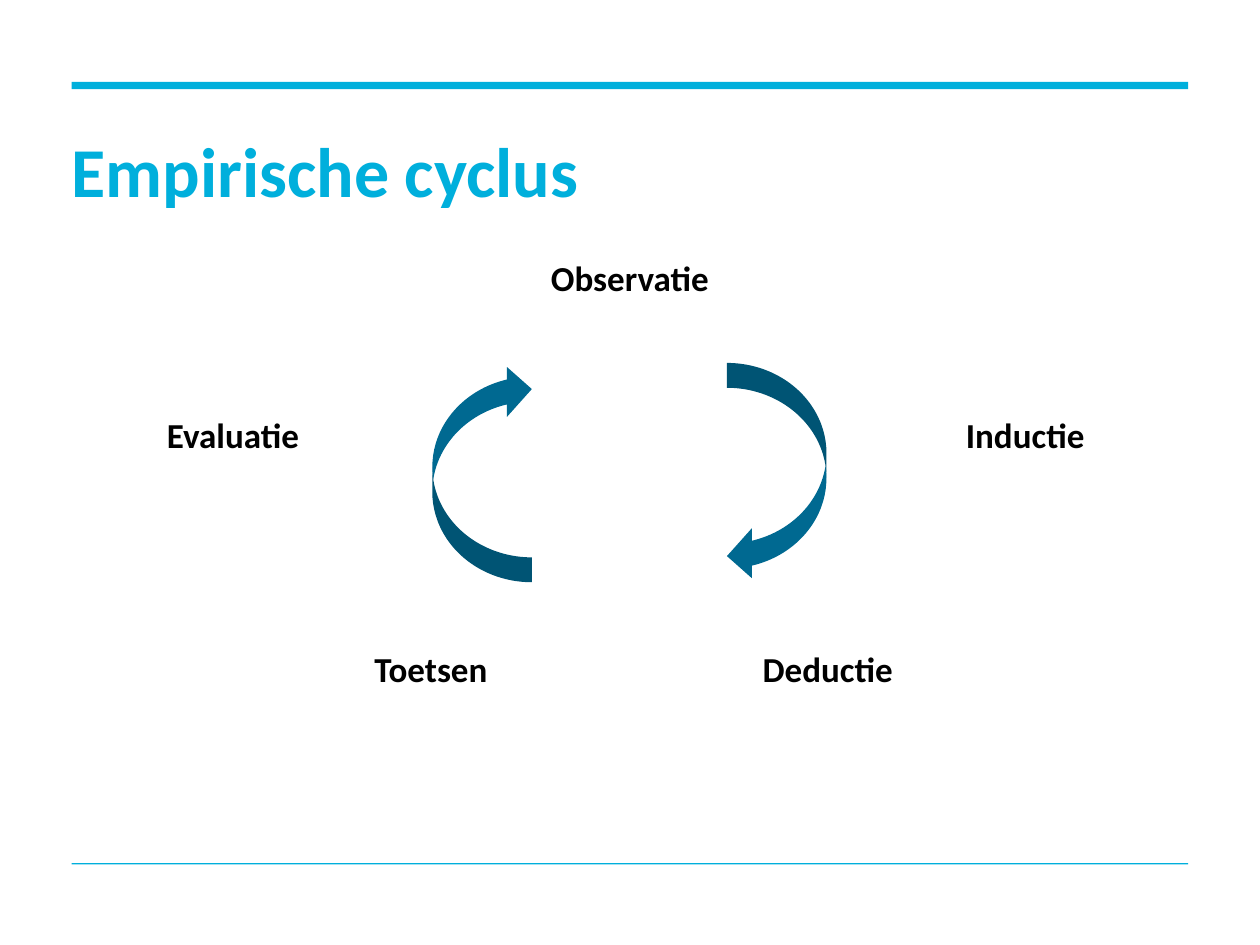
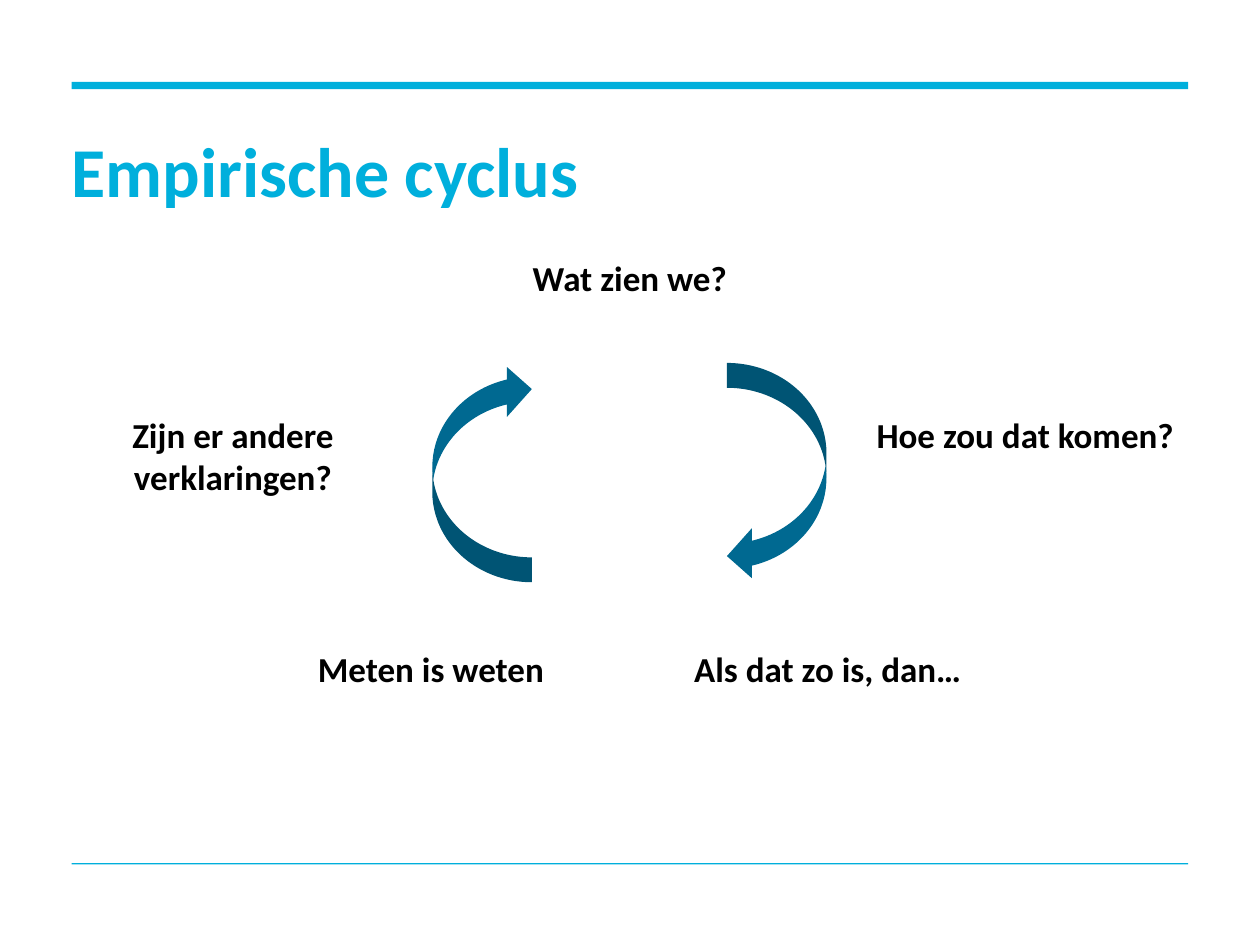
"""Build two slides on the empirical cycle."""
import pptx
import pptx.util
import pptx.dml.color
import pptx.enum.shapes
import pptx.enum.text

Pt = pptx.util.Pt
RGBColor = pptx.dml.color.RGBColor
Shape = pptx.enum.shapes.MSO_SHAPE
Align = pptx.enum.text.PP_ALIGN
Anchor = pptx.enum.text.MSO_ANCHOR
Fit = pptx.enum.text.MSO_AUTO_SIZE

CYAN = RGBColor(0x00, 0xAF, 0xDC)
BLUE = RGBColor(0x00, 0x69, 0x91)
BLACK = RGBColor(0x00, 0x00, 0x00)
FONT = "Calibri"
LEFT, WIDTH = 41, 638
RULES = [(46.8, 4.2), (493.2, 0.8)]
LABEL = (198.7, 31.5)
PLACES = [(260.6, 143.3), (486.5, 232.6), (373.7, 366.5), (146.9, 366.5), (33.8, 232.6)]
ARROWS = [(415.4, 207.4, 0), (247, 208.1, 180)]
TITLE = "Empirische cyclus"
STEPS = [
    ["Observatie", "Inductie", "Deductie", "Toetsen", "Evaluatie"],
    ["Wat zien we?", "Hoe zou dat komen?", "Als dat zo is, dan…",
     "Meten is weten", "Zijn er andere verklaringen?"],
]


def style(par, text, size, color, align):
    """Set the text of a paragraph and format its run."""
    par.text = text
    par.alignment = align
    font = par.runs[0].font
    font.name, font.size, font.bold = FONT, Pt(size), True
    font.color.rgb = color


def add_solid(slide, kind, box, color):
    """Add a filled shape without outline or shadow."""
    shape = slide.shapes.add_shape(kind, *map(Pt, box))
    shape.shadow.inherit = False
    shape.fill.solid()
    shape.fill.fore_color.rgb = color
    shape.line.fill.background()
    return shape


def add_title(slide):
    """Place and format the slide title."""
    title = slide.shapes.title
    title.left, title.top = Pt(LEFT), Pt(79.2)
    title.width, title.height = Pt(WIDTH), Pt(41.8)
    frame = title.text_frame
    frame.margin_left = frame.margin_right = 0
    frame.margin_top = frame.margin_bottom = 0
    frame.vertical_anchor = Anchor.MIDDLE
    frame.auto_size = Fit.NONE
    par = frame.paragraphs[0]
    style(par, TITLE, 40, CYAN, Align.LEFT)
    par.line_spacing = Pt(42)


def add_label(slide, text, place):
    """Add the centred label of one step."""
    box = slide.shapes.add_textbox(*map(Pt, place + LABEL))
    frame = box.text_frame
    frame.word_wrap = True
    frame.auto_size = Fit.SHAPE_TO_FIT_TEXT
    style(frame.paragraphs[0], text, 20, BLACK, Align.CENTER)


def add_cycle(deck, steps):
    """Add a slide with the labelled cycle."""
    slide = deck.slides.add_slide(deck.slide_layouts[5])
    for top, height in RULES:
        add_solid(slide, Shape.RECTANGLE, (LEFT, top, WIDTH, height), CYAN)
    add_title(slide)
    for text, place in zip(steps, PLACES):
        add_label(slide, text, place)
    for left, top, turn in ARROWS:
        arrow = add_solid(slide, Shape.CURVED_LEFT_ARROW, (left, top, 56.9, 124.6), BLUE)
        arrow.rotation = turn


def main():
    """Build and save the deck."""
    deck = pptx.Presentation()
    deck.slide_width, deck.slide_height = Pt(720), Pt(540)
    for steps in STEPS:
        add_cycle(deck, steps)
    deck.save("out.pptx")


if __name__ == "__main__":
    main()
